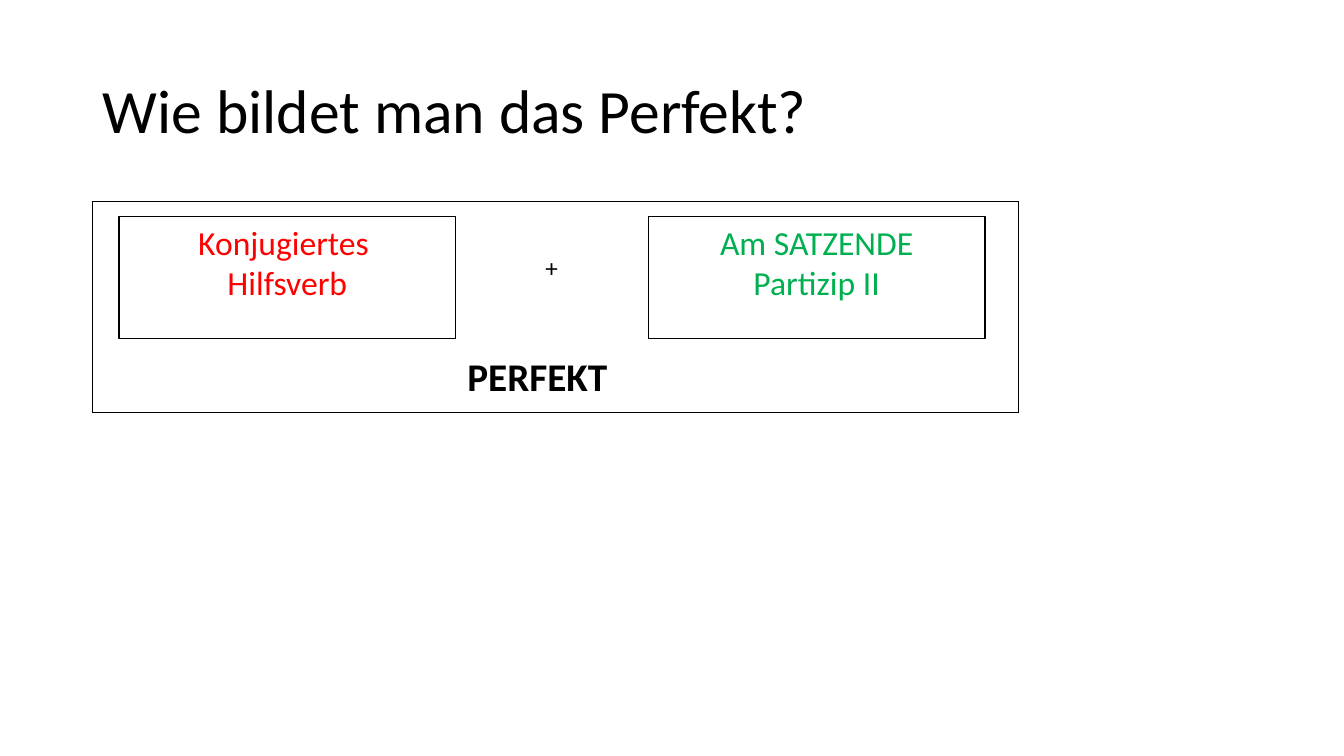
from lxml import etree
from pptx import Presentation
from pptx import util as u
from pptx.dml import color
from pptx.enum import shapes, text
from pptx.oxml import ns

FONT = "Calibri"


def rgb(hex_color):
    return color.RGBColor.from_string(hex_color)


def write(text_frame, content, size, hex_color="000000", alignment=text.PP_ALIGN.CENTER, bold=False):
    text_frame.text = content
    text_frame.word_wrap = True
    for paragraph in text_frame.paragraphs:
        paragraph.alignment = alignment
        for run in paragraph.runs:
            run.font.name = FONT
            run.font.size = u.Pt(size)
            run.font.bold = bold
            run.font.color.rgb = rgb(hex_color)


def add_title(slide, left, top, width, height):
    title = slide.shapes.title
    title.left, title.top = u.Inches(left), u.Inches(top)
    title.width, title.height = u.Inches(width), u.Inches(height)
    write(title.text_frame, "Wie bildet man das Perfekt?", 44, alignment=text.PP_ALIGN.LEFT)
    title.text_frame.vertical_anchor = text.MSO_ANCHOR.MIDDLE
    title.text_frame.auto_size = text.MSO_AUTO_SIZE.NONE
    title.text_frame.paragraphs[0].line_spacing = 0.9


def add_frame(slide, left, top, width, height):
    frame = slide.shapes.add_table(
        1, 1, u.Inches(left), u.Inches(top), u.Inches(width), u.Inches(height))
    frame.table.first_row = False
    frame.table.horz_banding = False
    cell = frame.table.cell(0, 0)
    properties = cell._tc.get_or_add_tcPr()
    for side in ("a:lnL", "a:lnR", "a:lnT", "a:lnB"):
        border = etree.SubElement(properties, ns.qn(side), w=str(u.Pt(1)))
        fill = etree.SubElement(border, ns.qn("a:solidFill"))
        etree.SubElement(fill, ns.qn("a:srgbClr"), val="000000")
    cell.fill.background()


def add_part(slide, left, top, width, height, content, hex_color):
    part = slide.shapes.add_shape(
        shapes.MSO_SHAPE.RECTANGLE,
        u.Inches(left), u.Inches(top), u.Inches(width), u.Inches(height))
    part.shadow.inherit = False
    part.fill.solid()
    part.fill.fore_color.rgb = rgb("FFFFFF")
    part.line.color.rgb = rgb("000000")
    part.line.width = u.Pt(1)
    write(part.text_frame, content, 24, hex_color)
    part.text_frame.vertical_anchor = text.MSO_ANCHOR.TOP


def add_label(slide, left, top, width, height, content, size, **style):
    label = slide.shapes.add_textbox(
        u.Inches(left), u.Inches(top), u.Inches(width), u.Inches(height))
    write(label.text_frame, content, size, **style)


def add_formula(slide, left, top, width, height):
    add_frame(slide, left, top, width, height)
    parts = (("Konjugiertes \nHilfsverb", "FF0000"), ("Am SATZENDE\nPartizip II", "00B050"))
    for index, (content, hex_color) in enumerate(parts):
        add_part(slide, left + 0.26 + index * 5.25, top + 0.15, 3.34, 1.21, content, hex_color)
    add_label(slide, left + 4.39, top + 0.45, 0.36, 0.4, "+", 18, alignment=text.PP_ALIGN.LEFT)
    add_label(slide, left + 2.64, top + 1.45, 3.54, 0.57, "PERFEKT", 28, bold=True)


def main():
    presentation = Presentation()
    presentation.slide_width = u.Inches(13.33)
    presentation.slide_height = u.Inches(7.5)
    slide = presentation.slides.add_slide(presentation.slide_layouts[5])
    add_title(slide, 0.92, 0.4, 11.5, 1.45)
    add_formula(slide, 0.92, 2, 9.18, 2.09)
    presentation.save("out.pptx")


if __name__ == "__main__":
    main()
